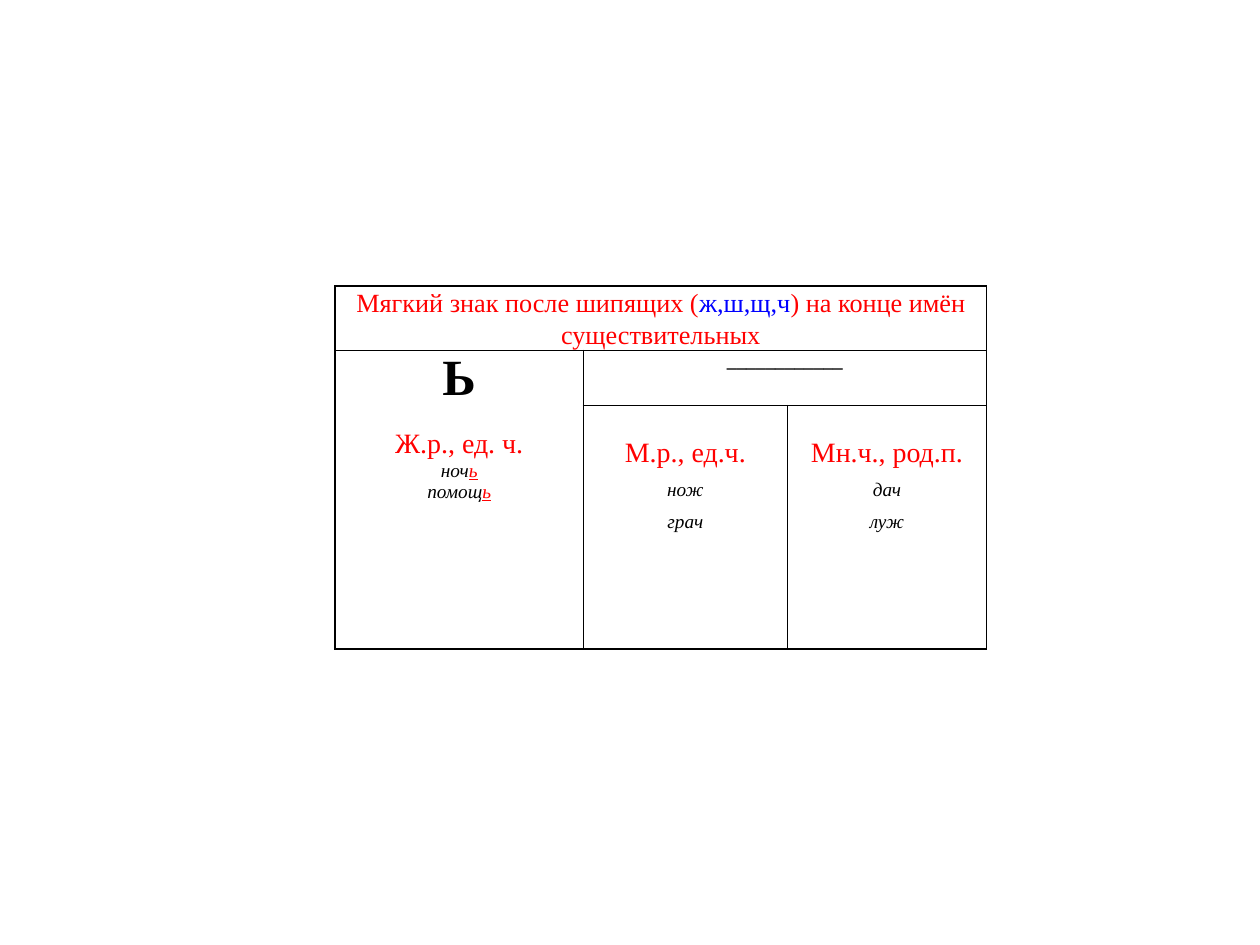
from pptx import Presentation
from pptx.dml.color import RGBColor
from pptx.enum import text
from pptx.oxml import parse_xml
from pptx.oxml import ns
from pptx.util import Inches, Pt

RED, BLUE, BLACK = "FF0000", "0000FF", "000000"
HEAD = dict(size=15, color=RED)
SIGN = dict(size=29, color=BLACK, bold=True)
KIND = dict(size=16, color=RED)
WORD = dict(size=11, color=BLACK, italic=True)
MARK = dict(size=11, color=RED, italic=True, underline=True)
DASH = dict(size=11, color=BLACK, bold=True)

COLS = [1.97, 1.62, 1.58]
ROWS = [0.51, 0.44, 1.93]
LEFT, TOP = 2.66, 2.27
LINE = 18.2

CELLS = [
    dict(at=(0, 0), to=(0, 2), line=LINE, paras=[
        [("Мягкий знак после шипящих (", HEAD),
         ("ж,ш,щ,ч", dict(HEAD, color=BLUE)),
         (") на конце имён существительных", HEAD)]]),
    dict(at=(1, 0), to=(2, 0), gaps={1: 12.7}, paras=[
        [("Ь", SIGN)],
        [("Ж.р., ед. ч.", KIND)],
        [("ноч", WORD), ("ь", MARK)],
        [("помощ", WORD), ("ь", MARK)]]),
    dict(at=(1, 1), to=(1, 2), paras=[[("____________", DASH)]]),
    dict(at=(2, 1), line=LINE, top=0.25, paras=[
        [("М.р., ед.ч.", KIND)], [("нож", WORD)], [("грач", WORD)]]),
    dict(at=(2, 2), line=LINE, top=0.25, paras=[
        [("Мн.ч., род.п.", KIND)], [("дач", WORD)], [("луж", WORD)]]),
]


def paint(code):
    return RGBColor.from_string(code)


def style(run, form):
    font = run.font
    font.name = "Times New Roman"
    for key, val in form.items():
        if key == "color":
            font.color.rgb = paint(val)
        else:
            setattr(font, key, Pt(val) if key == "size" else val)


def frame(cell):
    props = cell._tc.get_or_add_tcPr()
    for spot, side in enumerate(("lnL", "lnR", "lnT", "lnB")):
        props.insert(spot, parse_xml(
            f'<a:{side} {ns.nsdecls("a")} w="12700"><a:solidFill>'
            f'<a:srgbClr val="{BLACK}"/></a:solidFill></a:{side}>'))


def fill(cell, item):
    cell.margin_top = Inches(item.get("top", 0))
    for num, runs in enumerate(item["paras"]):
        frame_text = cell.text_frame
        para = frame_text.add_paragraph() if num else frame_text.paragraphs[0]
        para.alignment = text.PP_ALIGN.CENTER
        if "line" in item:
            para.line_spacing = Pt(item["line"])
        para.space_before = Pt(item.get("gaps", {}).get(num, 0))
        for words, form in runs:
            run = para.add_run()
            run.text = words
            style(run, form)


def main():
    deck = Presentation()
    deck.slide_width, deck.slide_height = Inches(10), Inches(7.5)
    slide = deck.slides.add_slide(deck.slide_layouts[6])
    table = slide.shapes.add_table(
        len(ROWS), len(COLS), Inches(LEFT), Inches(TOP),
        Inches(sum(COLS)), Inches(sum(ROWS))).table
    table.first_row = table.horz_banding = False
    for col, size in zip(table.columns, COLS):
        col.width = Inches(size)
    for row, size in zip(table.rows, ROWS):
        row.height = Inches(size)
    for cell in table.iter_cells():
        cell.fill.background()
        cell.margin_left = cell.margin_right = Inches(0.06)
        cell.margin_top = cell.margin_bottom = 0
        cell.text_frame.paragraphs[0].font.size = Pt(11)
        frame(cell)
    for item in CELLS:
        cell = table.cell(*item["at"])
        if "to" in item:
            cell.merge(table.cell(*item["to"]))
        fill(cell, item)
    deck.save("out.pptx")


if __name__ == "__main__":
    main()
